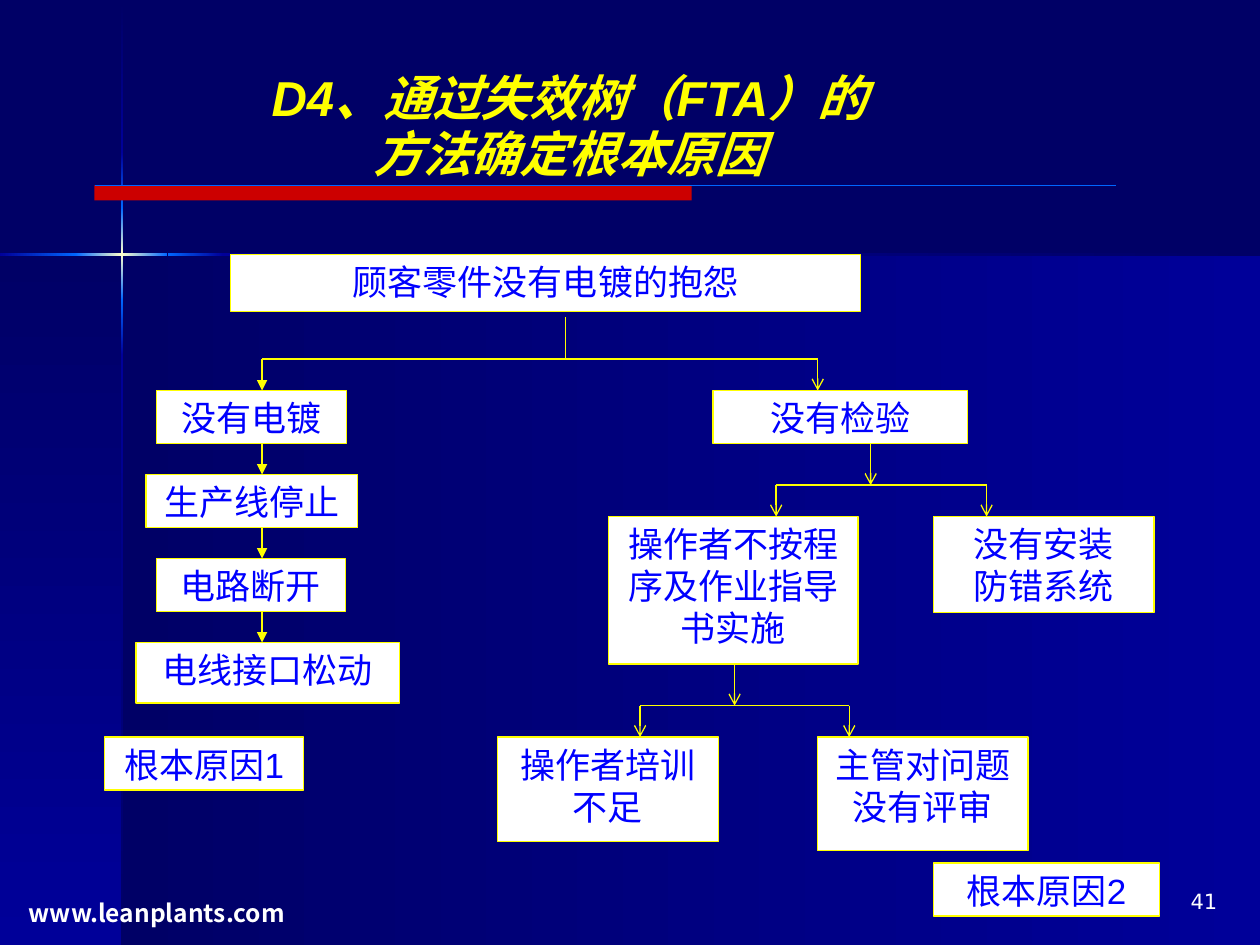
from lxml.etree import SubElement
from pptx import Presentation
from pptx.dml.color import RGBColor
from pptx.enum.shapes import MSO_CONNECTOR, MSO_SHAPE
from pptx.enum.text import PP_ALIGN
from pptx.oxml import parse_xml
from pptx.oxml.ns import nsdecls, qn
from pptx.util import Inches, Pt

NAVY, DEEP, AZURE, CREAM = "000066", "000099", "0066FF", "FFFFCC"
YELLOW, WHITE, BLUE, RED = "FFFF00", "FFFFFF", "0000FF", "CC0000"
CJK = "Noto Sans CJK SC"
ACROSS, DOWN = 0, 90


def rgb(value):
    return RGBColor.from_string(value)


def write(tf, lines, size, color, font="Arial", align=PP_ALIGN.CENTER,
          bold=False, italic=False, spacing=None):
    tf.word_wrap = True
    for i, line in enumerate(lines):
        p = tf.paragraphs[0] if i == 0 else tf.add_paragraph()
        p.alignment = align
        if spacing:
            p.line_spacing = spacing
        r = p.add_run()
        r.text = line
        r.font.size = Pt(size)
        r.font.name = font
        r.font.bold = bold
        r.font.italic = italic
        r.font.color.rgb = rgb(color)
        SubElement(r.font._element, qn("a:ea")).set("typeface", CJK)


def add_text(s, x, y, w, h, lines, size, color, **style):
    box = s.shapes.add_textbox(Inches(x), Inches(y), Inches(w), Inches(h))
    write(box.text_frame, lines, size, color, **style)


def add_rect(s, x, y, w, h, fill):
    sp = s.shapes.add_shape(MSO_SHAPE.RECTANGLE, Inches(x), Inches(y),
                            Inches(w), Inches(h))
    sp.shadow.inherit = False
    sp.fill.solid()
    sp.fill.fore_color.rgb = rgb(fill)
    sp.line.fill.background()
    return sp


def add_gradient(s, x, y, w, h, angle, *colors):
    sp = add_rect(s, x, y, w, h, colors[0])
    step = 100000 // (len(colors) - 1)
    stops = "".join(f'<a:gs pos="{i * step}"><a:srgbClr val="{c}"/></a:gs>'
                    for i, c in enumerate(colors))
    grad = parse_xml(f'<a:gradFill {nsdecls("a")}><a:gsLst>{stops}</a:gsLst>'
                     f'<a:lin ang="{angle * 60000}" scaled="0"/></a:gradFill>')
    solid = sp._element.spPr.find(qn("a:solidFill"))
    solid.getparent().replace(solid, grad)


def add_box(s, x, y, w, h, *lines):
    sp = add_rect(s, x, y, w, h, WHITE)
    sp.line.color.rgb = rgb(YELLOW)
    sp.line.width = Pt(0.75)
    sp.text_frame.vertical_anchor = 1  # top
    write(sp.text_frame, lines, 20, BLUE)


def add_line(s, x1, y1, x2, y2, head=None, color=YELLOW):
    c = s.shapes.add_connector(MSO_CONNECTOR.STRAIGHT, Inches(x1), Inches(y1),
                               Inches(x2), Inches(y2))
    c.line.color.rgb = rgb(color)
    c.line.width = Pt(0.75)
    if head:
        SubElement(c.line._get_or_add_ln(), qn("a:tailEnd")).set("type", head)
    SubElement(c._element.spPr, qn("a:effectLst"))


def add_branch(s, y, left, right, left_head="arrow"):
    add_line(s, left, y, right, y)
    add_line(s, left, y, left, y + 0.25, left_head)
    add_line(s, right, y, right, y + 0.25, "arrow")


def add_background(s):
    s.background.fill.solid()
    s.background.fill.fore_color.rgb = rgb(NAVY)
    add_gradient(s, 0.97, 2.02, 9.03, 5.48, ACROSS, NAVY, DEEP)
    add_gradient(s, 0, 2.02, 0.97, 5.48, DOWN, NAVY, DEEP)
    # Vertical beam of the star
    for y, h, colors in [(0.01, 1.2, (NAVY, DEEP)),
                         (2.82, 4.68, (DEEP, NAVY)),
                         (2.38, 0.44, (AZURE, DEEP)),
                         (1.21, 0.44, (DEEP, AZURE)),
                         (1.65, 0.73, (AZURE, CREAM, AZURE))]:
        add_gradient(s, 0.96, y, 0.02, h, DOWN, *colors)
    # Horizontal beam of the star
    for x, w, colors in [(1.77, 8.23, (DEEP, NAVY)),
                         (0, 0.61, (DEEP, AZURE)),
                         (1.33, 0.44, (AZURE, DEEP)),
                         (0.6, 0.73, (AZURE, CREAM, AZURE))]:
        add_gradient(s, x, 2.01, w, 0.02, ACROSS, *colors)
    # Rule under the title
    add_rect(s, 0.75, 1.47, 4.74, 0.12, RED)
    add_line(s, 0.75, 1.47, 8.86, 1.47, color=AZURE)


def add_fault_tree(s):
    add_box(s, 1.83, 2.02, 5, 0.45, "顾客零件没有电镀的抱怨")

    # Left chain: missing plating
    chain = [(1.24, 1.51, 0.42, "没有电镀"), (1.16, 1.68, 0.42, "生产线停止"),
             (1.24, 1.5, 0.42, "电路断开"), (1.08, 2.09, 0.48, "电线接口松动")]
    for i, (x, w, h, label) in enumerate(chain):
        y = 3.1 + i * 2 / 3
        add_box(s, x, y, w, h, label)
        if i:
            add_line(s, 2.08, y - 0.25, 2.08, y, "triangle")

    # Right branch: missing inspection
    add_box(s, 5.66, 3.1, 2.02, 0.42, "没有检验")
    add_box(s, 4.83, 4.1, 1.98, 1.17, "操作者不按程序及作业指导书实施")
    add_box(s, 7.41, 4.1, 1.75, 0.76, "没有安装", "防错系统")
    add_box(s, 3.95, 5.85, 1.75, 0.83, "操作者培训不足")
    add_box(s, 6.49, 5.85, 1.67, 0.9, "主管对问题没有评审")

    # Root causes
    add_box(s, 0.83, 5.85, 1.58, 0.42, "根本原因1")
    add_box(s, 7.41, 6.85, 1.79, 0.42, "根本原因2")

    # Stems and forks
    add_line(s, 4.49, 2.52, 4.49, 2.85)
    add_branch(s, 2.85, 2.08, 6.49, "triangle")
    add_line(s, 6.91, 3.52, 6.91, 3.85, "arrow")
    add_branch(s, 3.85, 6.16, 7.83)
    add_line(s, 5.83, 5.27, 5.83, 5.6, "arrow")
    add_branch(s, 5.6, 5.08, 6.74)


def main():
    prs = Presentation()
    prs.slide_width, prs.slide_height = Inches(10), Inches(7.5)
    s = prs.slides.add_slide(prs.slide_layouts[6])
    add_background(s)
    # Title and footer
    add_text(s, 0.35, 0.52, 8.33, 0.99,
             ["D4、通过失效树（FTA）的", "方法确定根本原因"], 28, YELLOW,
             bold=True, italic=True, spacing=0.95)
    add_text(s, 0.13, 7.08, 2.47, 0.46, ["www.leanplants.com"], 14, WHITE,
             font=CJK, align=PP_ALIGN.LEFT, bold=True)
    add_fault_tree(s)
    add_text(s, 7.68, 7, 2.08, 0.5, ["41"], 12, WHITE,
             font="DejaVu Sans", align=PP_ALIGN.RIGHT)
    prs.save("out.pptx")


if __name__ == "__main__":
    main()
